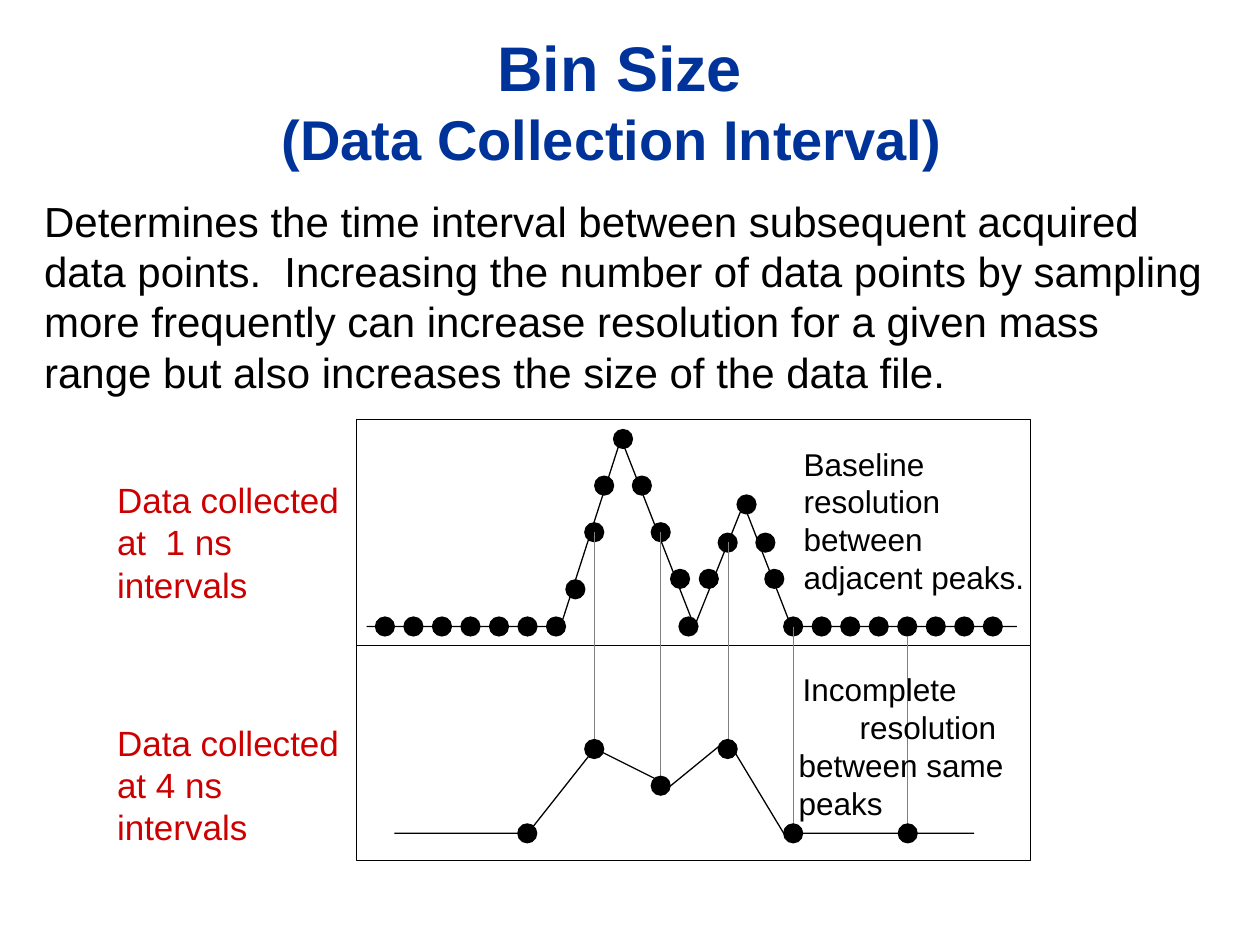
from pptx import Presentation
from pptx.dml.color import RGBColor
from pptx.enum.shapes import MSO_CONNECTOR, MSO_SHAPE
from pptx.enum.text import MSO_ANCHOR, PP_ALIGN
from pptx.oxml.ns import qn
from pptx.util import Cm, Pt
from lxml import etree

RECTANGLE, ELLIPSE = MSO_SHAPE.RECTANGLE, MSO_SHAPE.OVAL
STRAIGHT = MSO_CONNECTOR.STRAIGHT
TOP, MIDDLE = MSO_ANCHOR.TOP, MSO_ANCHOR.MIDDLE
LEFT, CENTER = PP_ALIGN.LEFT, PP_ALIGN.CENTER

FONT = "Arial"
COLORS = {"title": "003399", "label": "CC0000", "ink": "000000", "guide": "808080"}
DOT = 0.38
PITCH = 0.575

# Heights inside the plot panel, in cm from its top
FINE_BASE, DIVIDER, COARSE_BASE = 4.17, 4.55, 8.34

FINE_CURVE = [(0.2, FINE_BASE), (4.11, FINE_BASE), (5.33, 0.38), (6.81, FINE_BASE),
              (7.8, 1.7), (8.76, FINE_BASE), (13.31, FINE_BASE)]
PEAK_DOTS = [(4.41, 3.42), (4.79, 2.27), (4.99, 1.33), (5.37, 0.39), (5.75, 1.33),
             (6.13, 2.27), (6.52, 3.21), (6.69, FINE_BASE), (7.1, 3.21),
             (7.48, 2.48), (7.86, 1.71), (8.24, 2.48), (8.42, 3.21)]
COARSE_CURVES = [
    [(4.8, 6.63), (3.45, COARSE_BASE), (0.76, COARSE_BASE)],
    [(4.8, 6.63), (6.32, 7.39), (7.47, 6.45), (8.61, COARSE_BASE), (12.45, COARSE_BASE)],
]
# x, start of the guide line (None: no guide), height of the dot, guide width
COARSE_SAMPLES = [(7.48, 2.46, 6.64, 0.25), (8.8, FINE_BASE, COARSE_BASE, 0.75),
                  (11.11, 4.37, COARSE_BASE, 0.75), (6.13, 2.27, 7.38, 0.75),
                  (4.79, 2.27, 6.64, 0.75), (3.44, None, COARSE_BASE, 0.75)]


def color(name):
    return RGBColor.from_string(COLORS[name])


def set_line(shape, name="ink", width=0.75):
    shape.line.color.rgb = color(name)
    shape.line.width = Pt(width)


def add_text(slide, box, lines, ink, align=LEFT, anchor=TOP, bold=False):
    """Each line is (text, size in points, left indent in cm)."""
    frame = slide.shapes.add_textbox(*map(Cm, box)).text_frame
    frame.word_wrap = True
    frame.vertical_anchor = anchor
    for index, (text, size, indent) in enumerate(lines):
        paragraph = frame.add_paragraph() if index else frame.paragraphs[0]
        paragraph.alignment = align
        if indent:
            paragraph._p.get_or_add_pPr().set("marL", str(Cm(indent)))
        run = paragraph.add_run()
        run.text = text
        run.font.name = FONT
        run.font.size = Pt(size)
        run.font.bold = bold
        run.font.color.rgb = color(ink)


def add_line(slide, start, end, name="ink", width=0.75):
    line = slide.shapes.add_connector(STRAIGHT, *map(Cm, start + end))
    set_line(line, name, width)
    etree.SubElement(line._element.spPr, qn("a:effectLst"))


def add_dot(slide, x, y):
    dot = slide.shapes.add_shape(ELLIPSE, Cm(x - DOT / 2), Cm(y - DOT / 2), Cm(DOT), Cm(DOT))
    dot.shadow.inherit = False
    dot.fill.solid()
    dot.fill.fore_color.rgb = color("ink")
    set_line(dot)


def add_curve(slide, left, top, points):
    start, *rest = [(Cm(left + x), Cm(top + y)) for x, y in points]
    builder = slide.shapes.build_freeform(*start)
    builder.add_line_segments(rest, close=False)
    curve = builder.convert_to_shape()
    curve.shadow.inherit = False
    curve.fill.background()
    set_line(curve)


def add_panel(slide, box):
    left, top, width, _ = box
    frame = slide.shapes.add_shape(RECTANGLE, *map(Cm, box))
    frame.shadow.inherit = False
    frame.fill.background()
    set_line(frame)
    add_line(slide, (left, top + DIVIDER), (left + width, top + DIVIDER))


def add_fine_plot(slide, box):
    left, top = box[:2]
    add_curve(slide, left, top, FINE_CURVE)
    before = [(0.57 + PITCH * i, FINE_BASE) for i in range(7)]
    after = [(8.8 + PITCH * i, FINE_BASE) for i in range(8)]
    for x, y in before + PEAK_DOTS + after:
        add_dot(slide, left + x, top + y)
    add_text(slide, (left + 8.43, top + 0.38, 5.56, 3.3),
             [("Baseline resolution between adjacent peaks.", 18, 0.33)], "ink")


def add_coarse_plot(slide, box):
    left, top = box[:2]
    for points in COARSE_CURVES:
        add_curve(slide, left, top, points)
    for x, guide_top, y, width in COARSE_SAMPLES:
        if guide_top is not None:
            add_line(slide, (left + x, top + guide_top), (left + x, top + y), "guide", width)
        add_dot(slide, left + x, top + y)
    add_text(slide, (left + 7.85, top + 4.93, 6.12, 3.3),
             [("Incomplete", 18, 0.89), ("resolution", 18, 2.04),
              ("between same peaks", 18, 0.81)], "ink")


def add_header(slide, box):
    add_text(slide, box, [("Bin Size", 36, 0), ("(Data Collection Interval) ", 32, 0)],
             "title", CENTER, MIDDLE, bold=True)


def add_description(slide, box):
    text = ("Determines the time interval between subsequent acquired data points.  "
            "Increasing the number of data points by sampling more frequently can increase "
            "resolution for a given mass range but also increases the size of the data file.")
    add_text(slide, box, [(text, 24, 0)], "ink")


def add_plot_labels(slide, box):
    left, top, width, height = box
    labels = [("Data collected at  1 ns intervals", 0),
              ("Data collected at 4 ns intervals", 4.88)]
    for text, offset in labels:
        add_text(slide, (left, top + offset, width, height), [(text, 20, 0)], "label")


def main():
    presentation = Presentation()
    presentation.slide_width, presentation.slide_height = Cm(25.4), Cm(19.05)
    slide = presentation.slides.add_slide(presentation.slide_layouts[6])
    panel = (7.19, 8.46, 13.59, 8.89)

    add_header(slide, (1.7, 0.43, 21.59, 3.18))
    add_panel(slide, panel)
    add_fine_plot(slide, panel)
    add_coarse_plot(slide, panel)
    add_plot_labels(slide, (2.11, 9.53, 4.98, 2.79))
    add_description(slide, (0.64, 3.81, 24.13, 4.32))
    presentation.save("out.pptx")


if __name__ == "__main__":
    main()
